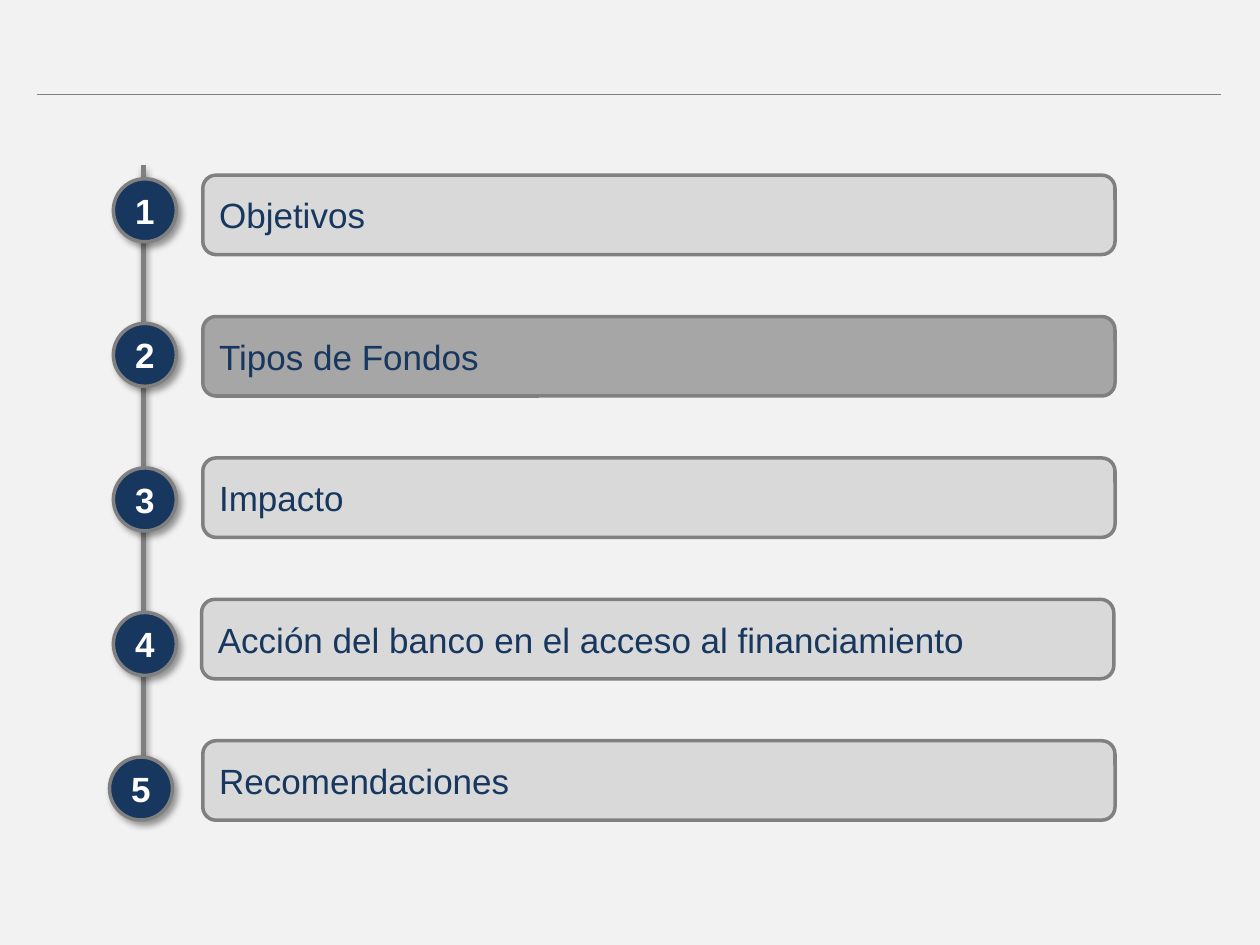
from lxml.etree import SubElement
from pptx import Presentation
from pptx.dml.color import RGBColor
from pptx.enum.shapes import MSO_CONNECTOR as CONNECTOR, MSO_SHAPE as SHAPE
from pptx.enum.text import MSO_ANCHOR as ANCHOR, PP_ALIGN as ALIGN
from pptx.oxml.ns import qn
from pptx.util import Pt

NAVY, GRAY, LIGHT, MIDDLE = "17375E", "808080", "D9D9D9", "A6A6A6"
AGENDA = [
    ("Objetivos", LIGHT, 115.9, 64.8),
    ("Tipos de Fondos", MIDDLE, 115.9, 64.8),
    ("Impacto", LIGHT, 115.9, 64.8),
    ("Acción del banco en el acceso al financiamiento", LIGHT, 115.2, 64.8),
    ("Recomendaciones", LIGHT, 115.9, 62.6),
]
FIRST_BAR, BAR_PITCH = 100.1, 80.8
FIRST_BADGE, BADGE_PITCH = 102.2, 82.6


def color(code):
    return RGBColor.from_string(code)


def add_effects(element, angle=None):
    effects = SubElement(element.spPr, qn("a:effectLst"))
    if angle is None:
        return
    shadow = SubElement(effects, qn("a:outerShdw"), blurRad=str(Pt(4)),
                        dist=str(Pt(3)), dir=str(angle * 60000), rotWithShape="0")
    tone = SubElement(shadow, qn("a:srgbClr"), val="000000")
    SubElement(tone, qn("a:alpha"), val="40000")


def write(frame, text, size=20, ink=NAVY, bold=False, align=ALIGN.LEFT):
    frame.word_wrap = True
    frame.vertical_anchor = ANCHOR.MIDDLE
    paragraph = frame.paragraphs[0]
    paragraph.alignment = align
    run = paragraph.add_run()
    run.text = text
    run.font.name = "Arial"
    run.font.size = Pt(size)
    run.font.bold = bold
    run.font.color.rgb = color(ink)


def add_rule(slide, start, end, width, angle=None):
    rule = slide.shapes.add_connector(CONNECTOR.STRAIGHT, *map(Pt, start + end))
    rule.line.color.rgb = color(GRAY)
    rule.line.width = Pt(width)
    add_effects(rule.element, angle)


def add_outlined(slide, kind, left, top, width, height, fill, angle=None):
    outlined = slide.shapes.add_shape(kind, *map(Pt, (left, top, width, height)))
    outlined.fill.solid()
    outlined.fill.fore_color.rgb = color(fill)
    outlined.line.color.rgb = color(GRAY)
    outlined.line.width = Pt(2)
    add_effects(outlined.element, angle)
    return outlined.text_frame


def add_bar(slide, topic, left, top, fill):
    label = add_outlined(slide, SHAPE.ROUNDED_RECTANGLE, left, top, 521.3, 45.4, fill)
    write(label, topic)


def add_badge(slide, number, left, top):
    label = add_outlined(slide, SHAPE.OVAL, left, top, 36, 36, NAVY, angle=45)
    label.margin_left = label.margin_right = 0
    write(label, str(number), ink="FFFFFF", bold=True, align=ALIGN.CENTER)


def main():
    deck = Presentation()
    deck.slide_width, deck.slide_height = Pt(720), Pt(540)
    slide = deck.slides.add_slide(deck.slide_layouts[6])
    slide.background.fill.solid()
    slide.background.fill.fore_color.rgb = color("F2F2F2")

    add_rule(slide, (20.9, 54), (697.7, 54), 0.75)
    add_rule(slide, (82.1, 94.3), (82.1, 445.7), 3, angle=90)
    for index, (topic, fill, bar_left, badge_left) in enumerate(AGENDA):
        add_bar(slide, topic, bar_left, FIRST_BAR + index * BAR_PITCH, fill)
        add_badge(slide, index + 1, badge_left, FIRST_BADGE + index * BADGE_PITCH)

    deck.save("out.pptx")


if __name__ == "__main__":
    main()
